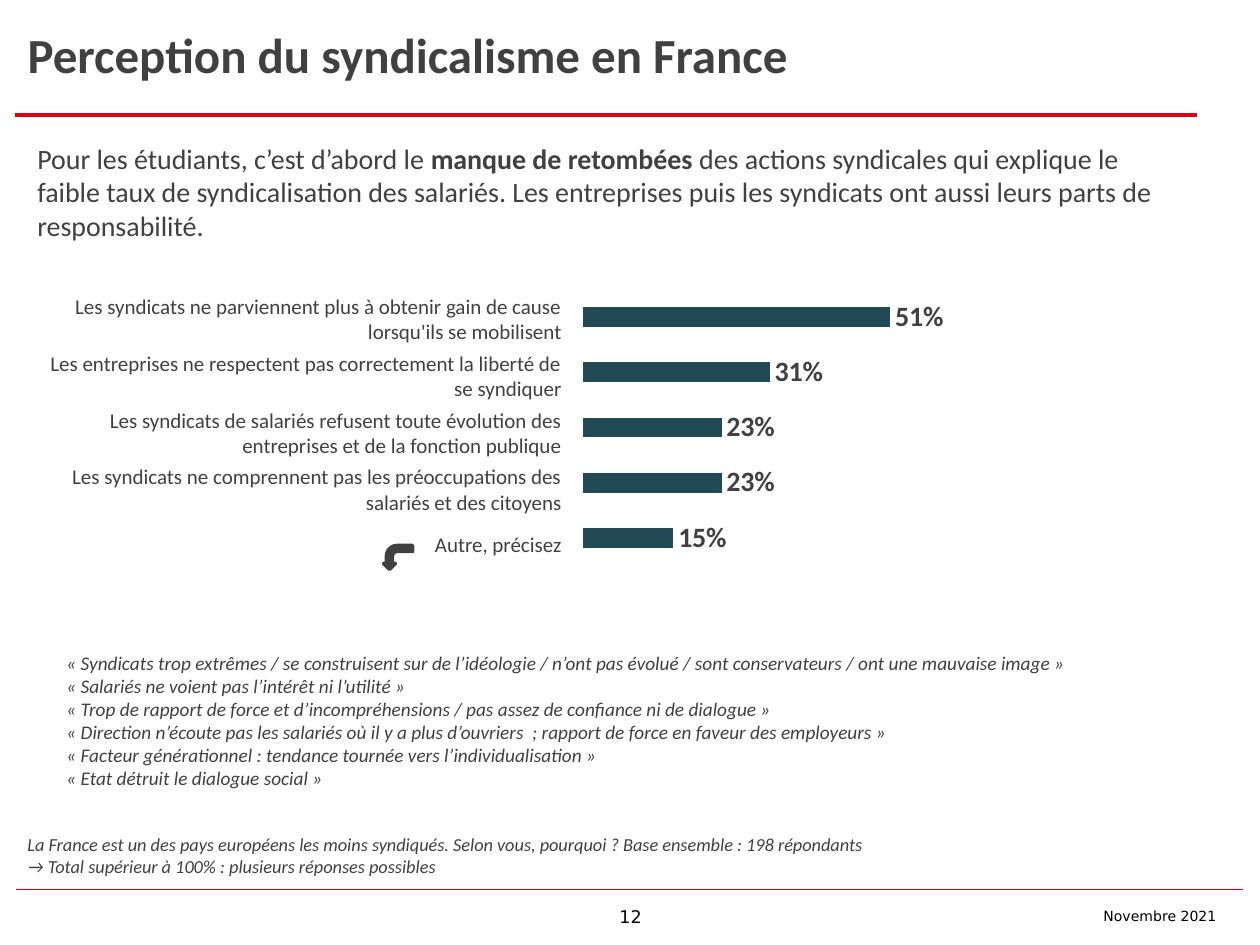
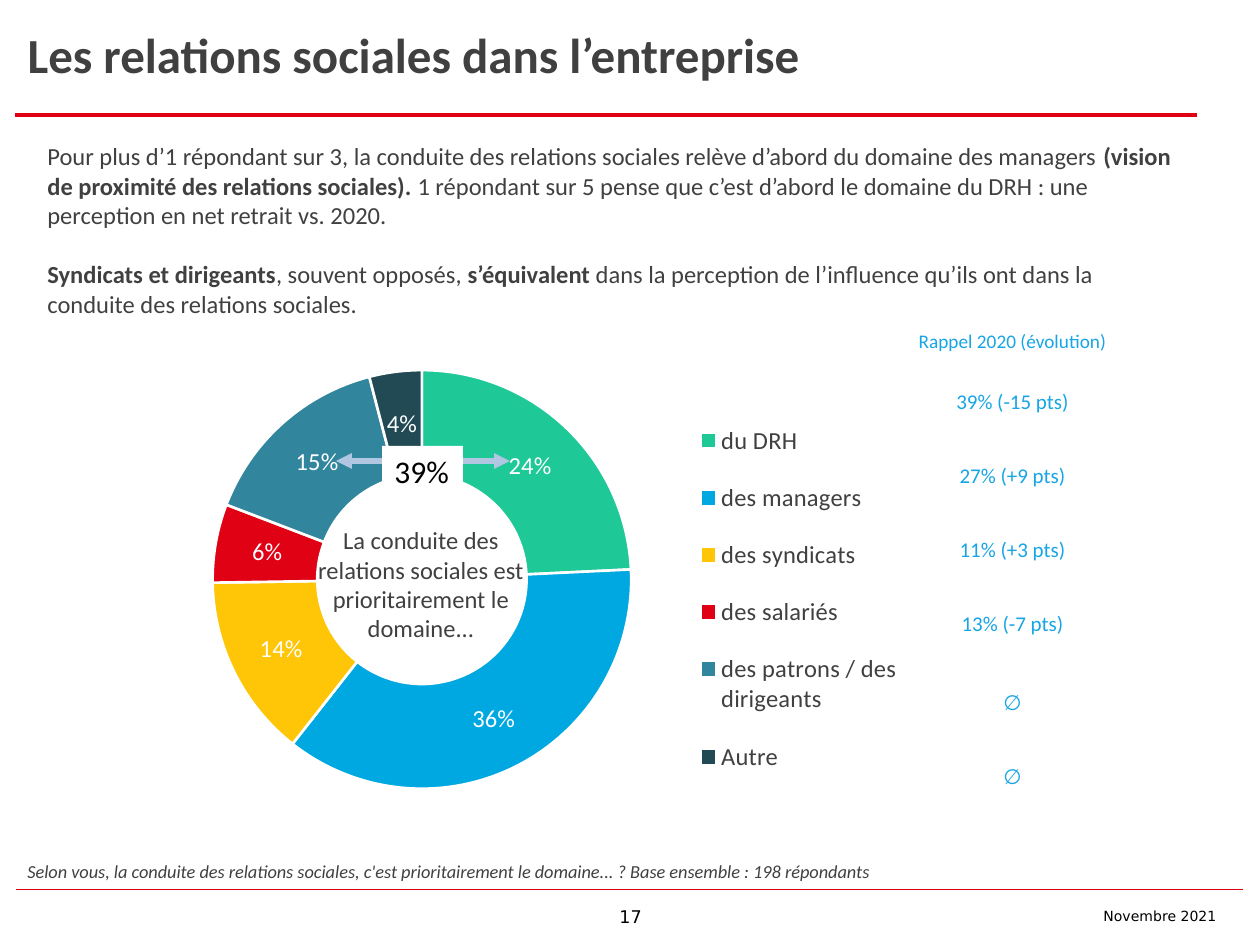
from lxml import etree
from pptx import Presentation
from pptx.chart.data import CategoryChartData
from pptx.dml.color import RGBColor
from pptx.enum.chart import XL_CHART_TYPE, XL_LABEL_POSITION, XL_LEGEND_POSITION
from pptx.enum.shapes import MSO_CONNECTOR, MSO_SHAPE
from pptx.enum.text import MSO_ANCHOR, PP_ALIGN
from pptx.oxml.ns import qn
from pptx.util import Pt

BAR = XL_CHART_TYPE.BAR_CLUSTERED
RING = XL_CHART_TYPE.DOUGHNUT
OUTER = XL_LABEL_POSITION.OUTSIDE_END
EAST = XL_LEGEND_POSITION.RIGHT
LINE = MSO_CONNECTOR.STRAIGHT
RECT = MSO_SHAPE.RECTANGLE
BENT = MSO_SHAPE.BENT_ARROW
TOP, MID = MSO_ANCHOR.TOP, MSO_ANCHOR.MIDDLE
LEFT, MIDST, RIGHT = PP_ALIGN.LEFT, PP_ALIGN.CENTER, PP_ALIGN.RIGHT

SCALE = 914400 / 126
FONT, PLAIN = "Calibri", "DejaVu Sans"
COLORS = {
    "red": "E00115", "text": "404040", "black": "000000", "white": "FFFFFF",
    "navy": "224A55", "green": "1EC897", "blue": "00A8E1", "gold": "FFC507",
    "teal": "31859C", "sky": "17A5E5", "pale": "B0C6E1",
}

CAUSES = [
    "Les syndicats ne parviennent plus à obtenir gain de cause lorsqu'ils se mobilisent",
    "Les entreprises ne respectent pas correctement la liberté de se syndiquer",
    "Les syndicats de salariés refusent toute évolution des entreprises et de la fonction publique",
    "Les syndicats ne comprennent pas les préoccupations des salariés et des citoyens",
    "Autre, précisez",
]
RATES = [0.15, 0.23, 0.23, 0.31, 0.51]
QUOTES = [
    "« Syndicats trop extrêmes / se construisent sur de l’idéologie / n’ont pas évolué / sont conservateurs / ont une mauvaise image »",
    "« Salariés ne voient pas l’intérêt ni l’utilité »",
    "« Trop de rapport de force et d’incompréhensions / pas assez de confiance ni de dialogue »",
    "« Direction n’écoute pas les salariés où il y a plus d’ouvriers  ; rapport de force en faveur des employeurs »",
    "« Facteur générationnel : tendance tournée vers l’individualisation »",
    "« Etat détruit le dialogue social »",
]
SHARES = [
    ("du DRH", 0.24, "green"),
    ("des managers", 0.36, "blue"),
    ("des syndicats", 0.14, "gold"),
    ("des salariés", 0.06, "red"),
    ("des patrons / des dirigeants", 0.15, "teal"),
    ("Autre", 0.04, "navy"),
]
RECALL = [
    ("Rappel 2020 (évolution)", 43), ("39% (-15 pts)", 79), ("27% (+9 pts)", 69),
    ("11% (+3 pts)", 79), ("13% (-7 pts)", 69), ("∅", 89), ("∅", 59),
]


def px(n):
    return round(n * SCALE)


def emu(box):
    return [px(n) for n in box]


def rgb(name):
    return RGBColor.from_string(COLORS[name])


def style(font, size, color="text", bold=False, italic=False, name=FONT):
    font.name, font.size = name, Pt(size)
    font.bold, font.italic = bold, italic
    font.color.rgb = rgb(color)


def fill_text(frame, lines, size, color="text", align=LEFT, gaps=(), **look):
    frame.text = "\n".join(line.replace("*", "") for line in lines)
    for para, line in zip(frame.paragraphs, lines):
        para.alignment = align
        parts = line.split("*")
        para.text = parts[0]
        for part in parts[1:]:
            para.add_run().text = part
        for i, run in enumerate(para.runs):
            style(run.font, size, color, **look)
            if len(parts) > 1:
                run.font.bold = parts.index(run.text) % 2 == 1
    for para, gap in zip(frame.paragraphs[1:], gaps):
        para.space_before = Pt(gap)


def add_text(slide, box, lines, size, **look):
    frame = slide.shapes.add_textbox(*emu(box)).text_frame
    frame.word_wrap = True
    fill_text(frame, lines, size, **look)


def add_line(slide, x1, x2, y, color, width):
    line = slide.shapes.add_connector(LINE, px(x1), px(y), px(x2), px(y))
    line.line.color.rgb = rgb(color)
    line.line.width = Pt(width)
    etree.SubElement(line._element.spPr, qn("a:effectLst"))
    return line


def add_shape(slide, kind, box, color):
    shape = slide.shapes.add_shape(kind, *emu(box))
    shape.shadow.inherit = False
    shape.fill.solid()
    shape.fill.fore_color.rgb = rgb(color)
    shape.line.fill.background()
    return shape


def make_layout(sizes, inner=False):
    layout = etree.Element(qn("c:layout"))
    manual = etree.SubElement(layout, qn("c:manualLayout"))
    pairs = [("layoutTarget", "inner")] if inner else []
    pairs += [("xMode", "edge"), ("yMode", "edge"), *zip("xywh", sizes)]
    for tag, val in pairs:
        etree.SubElement(manual, qn("c:" + tag)).set("val", str(val))
    return layout


def drop_layout(node):
    for old in node.findall(qn("c:layout")):
        node.remove(old)


def add_chart(slide, kind, box, cats, vals, area):
    data = CategoryChartData(number_format="0%")
    data.categories = cats
    data.add_series("Part des réponses", vals)
    chart = slide.shapes.add_chart(kind, *emu(box), data).chart
    style(chart.font, 10, "black")
    chart.has_title = chart.has_legend = False
    node = chart._chartSpace.chart.plotArea
    drop_layout(node)
    node.insert(0, make_layout(area, inner=True))
    return chart


def add_labels(plot, size, color, bold=False):
    plot.has_data_labels = True
    labels = plot.data_labels
    labels.show_value = True
    labels.show_percentage = False
    labels.number_format = "0%"
    labels.number_format_is_linked = False
    style(labels.font, size, color, bold)
    return labels


def draw_base(deck, title, page):
    slide = deck.slides.add_slide(deck.slide_layouts[5])
    head = slide.shapes.title
    head.left, head.top, head.width, head.height = emu((15, 6, 1186, 96))
    head.text_frame.vertical_anchor = MID
    fill_text(head.text_frame, [title], 28, bold=True)
    add_line(slide, 15, 1197, 115, "red", 2)
    add_line(slide, 16, 1243, 889, "red", 0.5)
    for box, text, size, align in (
        ((591, 900, 79, 34), str(page), 10, MIDST),
        ((891, 901, 338, 30), "Novembre 2021", 8, RIGHT),
    ):
        add_text(slide, box, [text], size, color="black", align=align, name=PLAIN)
    return slide


def draw_bars(slide, box):
    x, y, w, h = box
    cats = [str(n + 1) for n in range(len(RATES))]
    chart = add_chart(slide, BAR, box, cats, RATES, (0.465, 0.06, 0.309, 0.739))
    plot = chart.plots[0]
    plot.gap_width = 182
    plot.vary_by_categories = False
    fill = plot.series[0].format.fill
    fill.solid()
    fill.fore_color.rgb = rgb("navy")
    add_labels(plot, 16, "text", True).position = OUTER
    axis = chart.value_axis
    axis.minimum_scale, axis.maximum_scale = 0, 0.6
    axis.has_major_gridlines = False
    axis.visible = chart.category_axis.visible = False
    add_text(slide, (x - 24, y + 20, 559, 285), CAUSES, 12, align=RIGHT,
             gaps=(3.7, 3.7, 3.7, 9.8))
    hook = add_shape(slide, BENT, (x + 347, y + 276, 24, 29), "text")
    hook.line.color.rgb = rgb("text")
    hook.line.width = Pt(2)
    hook.rotation = 270
    hook._element.spPr.find(qn("a:xfrm")).set("flipH", "1")


def draw_ring(slide, box):
    x, y, w, h = box
    cats, vals, hues = zip(*SHARES)
    chart = add_chart(slide, RING, box, cats, vals, (0.05, 0.119, 0.645, 0.753))
    plot = chart.plots[0]
    plot.vary_by_categories = True
    plot._element.find(qn("c:holeSize")).set("val", "71")
    for i, hue in enumerate(hues):
        form = plot.series[0].points[i].format
        form.fill.solid()
        form.fill.fore_color.rgb = rgb(hue)
        form.line.color.rgb = rgb("white")
        form.line.width = Pt(1.5)
    add_labels(plot, 14, "white")
    chart.has_legend = True
    legend = chart.legend
    legend.position = EAST
    legend.include_in_layout = False
    style(legend.font, 14)
    node = legend._element
    drop_layout(node)
    spot = node.find(qn("c:legendPos"))
    spot.addnext(make_layout((0.7, 0.17, 0.26, 0.72)))
    add_text(slide, (x + 177, y + 215, 258, 131),
             ["La conduite des relations sociales est prioritairement le domaine..."],
             14, align=MIDST)
    arrow = add_line(slide, x + 221, x + 395, y + 157, "pale", 3)
    for tag in ("a:headEnd", "a:tailEnd"):
        etree.SubElement(arrow.line._get_or_add_ln(), qn(tag)).set("type", "triangle")
    badge = add_shape(slide, RECT, (x + 267, y + 142, 81, 50), "white")
    frame = badge.text_frame
    frame.word_wrap = False
    frame.vertical_anchor = TOP
    fill_text(frame, ["39%"], 18, color="black")


def draw_recall(slide, box):
    table = slide.shapes.add_table(len(RECALL), 1, *emu(box)).table
    table.first_row = table.horz_banding = False
    for i, (text, tall) in enumerate(RECALL):
        table.rows[i].height = px(tall)
        cell = table.cell(i, 0)
        cell.fill.background()
        cell.vertical_anchor = MID
        fill_text(cell.text_frame, [text], 12 if i else 11, color="sky", align=MIDST)


def draw_causes(deck):
    slide = draw_base(deck, "Perception du syndicalisme en France", 12)
    add_text(slide, (25, 135, 1171, 115), [
        "Pour les étudiants, c’est d’abord le *manque de retombées *des actions syndicales qui explique le faible taux de syndicalisation des salariés. Les entreprises puis les syndicats ont aussi leurs parts de responsabilité.",
    ], 16)
    add_text(slide, (15, 827, 1091, 57), [
        "La France est un des pays européens les moins syndiqués. Selon vous, pourquoi ? Base ensemble : 198 répondants",
        "→ Total supérieur à 100% : plusieurs réponses possibles",
    ], 10.5, italic=True)
    draw_bars(slide, (39, 267, 1170, 374))
    add_text(slide, (54, 645, 1142, 152), QUOTES, 11, italic=True)


def draw_roles(deck):
    slide = draw_base(deck, "Les relations sociales dans l’entreprise", 17)
    add_text(slide, (15, 854, 1091, 35), [
        "Selon vous, la conduite des relations sociales, c'est prioritairement le domaine... ? Base ensemble : 198 répondants",
    ], 10.5, italic=True)
    draw_ring(slide, (115, 304, 824, 556))
    draw_recall(slide, (896, 320, 233, 487))
    add_text(slide, (35, 135, 1161, 190), [
        "Pour plus d’1 répondant sur 3, la conduite des relations sociales relève d’abord du domaine des managers *(vision de proximité des relations sociales). *1 répondant sur 5 pense que c’est d’abord le domaine du DRH : une perception en net retrait vs. 2020.",
        "*Syndicats et dirigeants*, souvent opposés, *s’équivalent* dans la perception de l’influence qu’ils ont dans la conduite des relations sociales.",
    ], 14, gaps=(17,))


def main():
    deck = Presentation()
    deck.slide_width, deck.slide_height = px(1260), px(945)
    draw_causes(deck)
    draw_roles(deck)
    deck.save("out.pptx")


if __name__ == "__main__":
    main()
